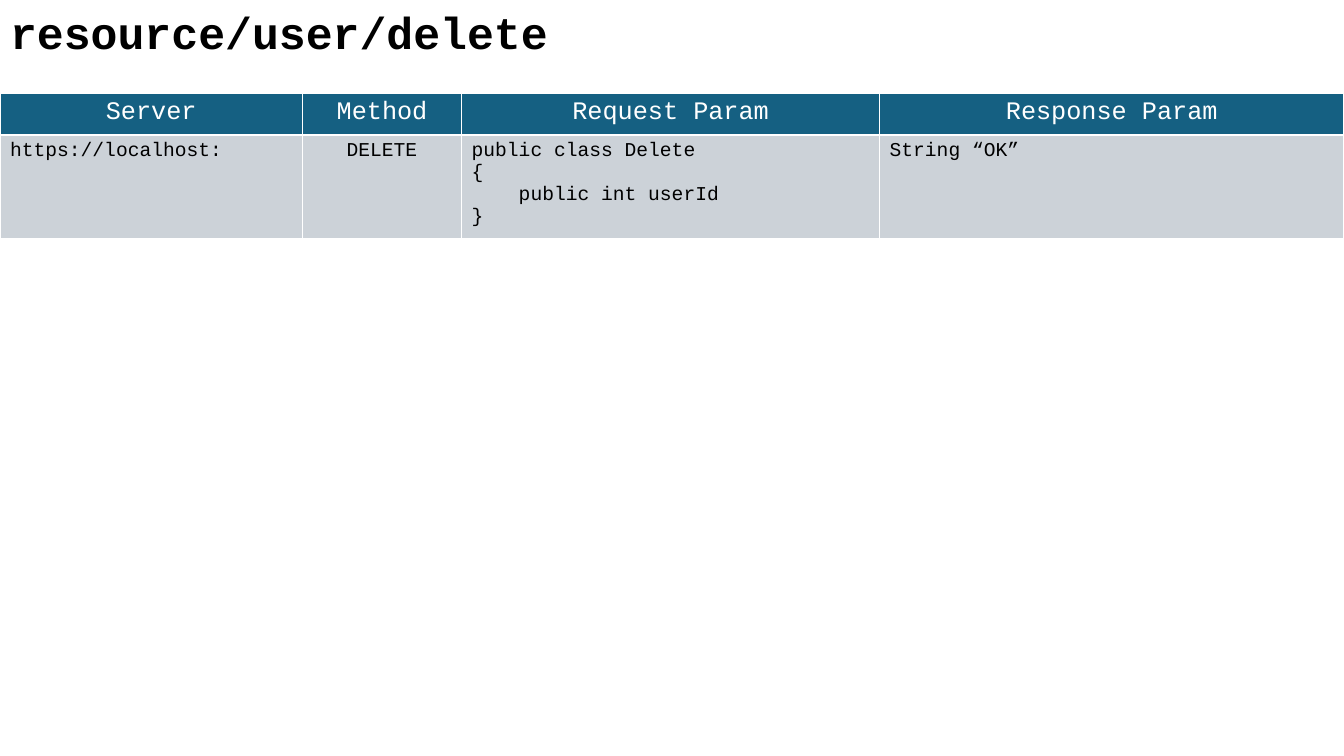
from dataclasses import dataclass

from lxml import etree
from pptx import Presentation
from pptx.dml.color import RGBColor
from pptx.enum.text import MSO_ANCHOR, MSO_AUTO_SIZE, PP_ALIGN
from pptx.oxml.ns import qn
from pptx.util import Pt

LEFT, CENTER = PP_ALIGN.LEFT, PP_ALIGN.CENTER
TOP = MSO_ANCHOR.TOP
FIXED = MSO_AUTO_SIZE.NONE
FACE = "Courier New"
WHITE, BLACK, TEAL, GRAY = "FFFFFF", "000000", "156082", "CCD2D8"
SIDES = ("a:lnL", "a:lnR", "a:lnT", "a:lnB")


@dataclass(frozen=True)
class Field:
    head: str
    body: str
    width: float
    align: PP_ALIGN = LEFT


@dataclass(frozen=True)
class Style:
    size: float
    ink: str
    bold: bool = False


TITLE = Style(32, BLACK, True)
HEAD = Style(18, WHITE)
BODY = Style(14, BLACK)

CODE = """public class Delete
{
    public int userId
}"""

FIELDS = (
    Field("Server", "https://localhost:", 216),
    Field("Method", "DELETE", 113.7, CENTER),
    Field("Request Param", CODE, 298.6),
    Field("Response Param", "String “OK”", 331.7),
)
HEIGHTS = (29.5, 74.2)


def paint(target, color: str) -> None:
    target.rgb = RGBColor.from_string(color)


def write(frame, text: str, style: Style, align: PP_ALIGN) -> None:
    frame.text = text
    look = {"name": FACE, "size": Pt(style.size), "bold": style.bold}
    for para in frame.paragraphs:
        para.alignment = align
        for run in para.runs:
            for key, value in look.items():
                setattr(run.font, key, value)
            paint(run.font.color, style.ink)


def border(cell, color: str, width: float) -> None:
    props = cell._tc.get_or_add_tcPr()
    for side in SIDES:
        line = etree.SubElement(props, qn(side), w=str(Pt(width)))
        fill = etree.SubElement(line, qn("a:solidFill"))
        etree.SubElement(fill, qn("a:srgbClr"), val=color)


def fill_cell(cell, text: str, style: Style, align: PP_ALIGN, color: str) -> None:
    write(cell.text_frame, text, style, align)
    border(cell, WHITE, 1)
    cell.fill.solid()
    paint(cell.fill.fore_color, color)


def add_title(slide, text: str) -> None:
    title = slide.shapes.title
    place = {"left": Pt(0), "top": Pt(0), "width": Pt(680), "height": Pt(46)}
    for key, value in place.items():
        setattr(title, key, value)
    frame = title.text_frame
    for key, value in {"auto_size": FIXED, "vertical_anchor": TOP}.items():
        setattr(frame, key, value)
    write(frame, text, TITLE, LEFT)


def add_grid(slide) -> None:
    width = sum(field.width for field in FIELDS)
    table = slide.shapes.add_table(
        len(HEIGHTS), len(FIELDS), Pt(0), Pt(67), Pt(width), Pt(sum(HEIGHTS))
    ).table
    for row, height in zip(table.rows, HEIGHTS):
        row.height = Pt(height)
    for col, field in enumerate(FIELDS):
        table.columns[col].width = Pt(field.width)
        fill_cell(table.cell(0, col), field.head, HEAD, CENTER, TEAL)
        fill_cell(table.cell(1, col), field.body, BODY, field.align, GRAY)


def main() -> None:
    deck = Presentation()
    deck.slide_width, deck.slide_height = Pt(960), Pt(540)
    slide = deck.slides.add_slide(deck.slide_layouts[5])
    add_title(slide, "resource/user/delete")
    add_grid(slide)
    deck.save("out.pptx")


if __name__ == "__main__":
    main()
